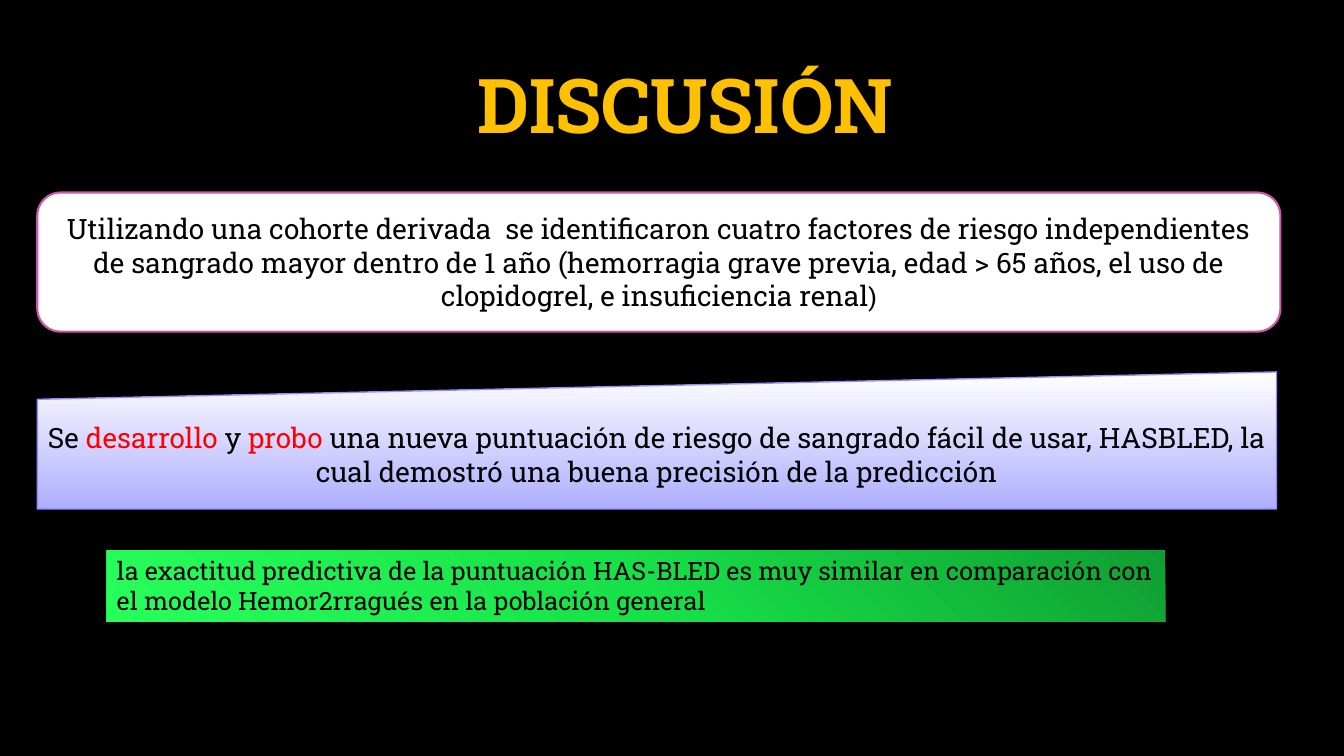
from copy import deepcopy

from pptx import Presentation
from pptx.dml.color import RGBColor
from pptx.enum.shapes import MSO_SHAPE
from pptx.enum.text import MSO_ANCHOR, MSO_AUTO_SIZE, PP_ALIGN
from pptx.util import Inches, Pt

BLACK, WHITE, RED, AMBER = "000000", "FFFFFF", "FF0000", "FFC000"
TITLE_ONLY = 5


def color(hex_code):
    return RGBColor.from_string(hex_code)


class DiscussionSlide:
    """Holds the text style and the slide being filled."""

    base_font = {"name": "Roboto Slab", "size": Pt(20), "bold": False}

    def __init__(self, deck):
        self.slide = deck.slides.add_slide(deck.slide_layouts[TITLE_ONLY])
        background = self.slide.background.fill
        background.solid()
        background.fore_color.rgb = color(BLACK)

    def title(self, box, text):
        heading = self.slide.shapes.title
        heading.left, heading.top, heading.width, heading.height = map(Inches, box)
        self.outline(heading, BLACK, 1.5)
        self.solid(heading, BLACK)
        title_format = {"size": Pt(54), "bold": True, "color": AMBER}
        self.add_text(heading, [(text, title_format)], anchor=MSO_ANCHOR.TOP)

    def panel(self, preset, box):
        panel = self.slide.shapes.add_shape(preset, *map(Inches, box))
        panel.shadow.inherit = False
        panel.line.fill.background()
        return panel

    def solid(self, shape, hex_code):
        shape.fill.solid()
        shape.fill.fore_color.rgb = color(hex_code)

    def gradient(self, shape, hex_codes, clockwise_angle):
        """Spread the colours evenly along the given direction."""
        fill = shape.fill
        fill.gradient()
        fill.gradient_angle = 360 - clockwise_angle
        stop_list = fill._fill._gradFill.gsLst
        for _ in hex_codes[2:]:
            stop_list.append(deepcopy(stop_list[0]))
        for index, (stop, hex_code) in enumerate(zip(fill.gradient_stops, hex_codes)):
            stop.position = index / (len(hex_codes) - 1)
            stop.color.rgb = color(hex_code)

    def outline(self, shape, hex_code, points):
        shape.line.color.rgb = color(hex_code)
        shape.line.width = Pt(points)

    def add_text(self, shape, runs, align=PP_ALIGN.CENTER, anchor=MSO_ANCHOR.MIDDLE):
        """Fill one paragraph from (text, format changes) pairs."""
        frame = shape.text_frame
        frame_format = {
            "word_wrap": True,
            "auto_size": MSO_AUTO_SIZE.NONE,
            "vertical_anchor": anchor,
        }
        for name, value in frame_format.items():
            setattr(frame, name, value)
        paragraph = frame.paragraphs[0]
        paragraph.alignment = align
        for text, changes in runs:
            run = paragraph.add_run()
            run.text = text
            font_format = {**self.base_font, "color": BLACK, **changes}
            run.font.color.rgb = color(font_format.pop("color"))
            for name, value in font_format.items():
                setattr(run.font, name, value)


def main():
    deck = Presentation()
    deck.slide_width, deck.slide_height = Inches(13.33), Inches(7.5)
    discussion = DiscussionSlide(deck)
    discussion.title((3.3, 0.52, 7.18, 1.01), "DISCUSIÓN ")

    risk_factors = discussion.panel(
        MSO_SHAPE.ROUNDED_RECTANGLE, (0.37, 1.91, 12.33, 1.38))
    discussion.solid(risk_factors, WHITE)
    discussion.outline(risk_factors, "CE57AB", 1.5)
    discussion.add_text(risk_factors, [
        ("Utilizando una cohorte derivada  se identificaron cuatro factores de "
         "riesgo independientes de sangrado mayor dentro de 1 año (hemorragia "
         "grave previa, edad > 65 años, el uso de clopidogrel, e insuficiencia "
         "renal", {}),
        (")", {"size": Pt(18)}),
    ])

    new_score = discussion.panel(
        MSO_SHAPE.FLOWCHART_MANUAL_INPUT, (0.37, 3.69, 12.29, 1.36))
    discussion.gradient(new_score, [WHITE, "AEAEFF"], 90)
    discussion.outline(new_score, "8E8EFD", 1)
    discussion.add_text(new_score, [
        ("Se ", {}),
        ("desarrollo ", {"color": RED}),
        ("y ", {}),
        ("probo ", {"color": RED}),
        ("una nueva puntuación de riesgo de sangrado fácil de usar, HASBLED, la "
         "cual demostró una buena precisión de la predicción", {}),
    ])

    comparison = discussion.panel(MSO_SHAPE.RECTANGLE, (1.06, 5.46, 10.5, 0.71))
    discussion.gradient(comparison, ["109E32", "17E148", "27FF5B"], 135)
    discussion.add_text(comparison, [
        ("la exactitud predictiva de la puntuación HAS-BLED es muy similar en "
         "comparación con el modelo Hemor2rragués en la población general",
         {"size": Pt(18)}),
    ], align=PP_ALIGN.LEFT, anchor=MSO_ANCHOR.TOP)

    deck.save("out.pptx")


if __name__ == "__main__":
    main()
